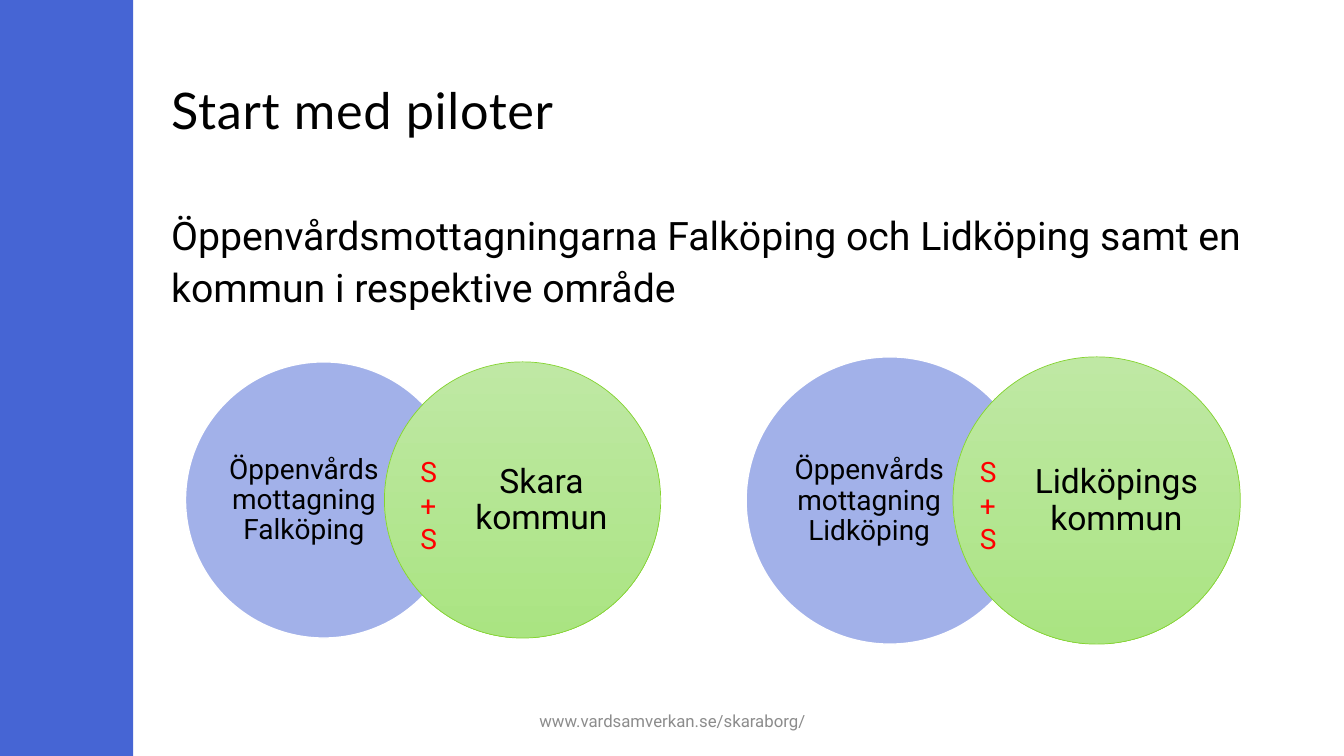
from lxml import etree
from pptx import Presentation
from pptx.dml.color import RGBColor
from pptx.enum import shapes, text
from pptx.oxml import ns
from pptx.util import Inches, Pt

TITLE = "Start med piloter"
BODY = "Öppenvårdsmottagningarna Falköping och Lidköping samt en kommun i respektive område"
FOOTER = "www.vardsamverkan.se/skaraborg/"
OVERLAP = "S + S"
PILOTS = [
    {"clinic": "Öppenvårdsmottagning\vFalköping", "municipality": "Skara kommun",
     "left": 1.84, "top": 3.59, "diameter": 2.74, "overlap_left": 4.07},
    {"clinic": "Öppenvårdsmottagning\vLidköping", "municipality": "Lidköpings kommun",
     "left": 7.4, "top": 3.54, "diameter": 2.85, "overlap_left": 9.62},
]

BLUE = RGBColor(0x46, 0x65, 0xD4)
WHITE = RGBColor(0xFF, 0xFF, 0xFF)
BLACK = RGBColor(0, 0, 0)
GREY = RGBColor(0x8C, 0x8C, 0x8C)
RED = RGBColor(0xFF, 0, 0)
GREEN_LIGHT = RGBColor(0xBF, 0xE8, 0xA4)
GREEN_DARK = RGBColor(0xAA, 0xE4, 0x82)
GREEN_LINE = RGBColor(0x85, 0xD4, 0x31)

CIRCLE_STEP = 0.72
LABEL_WIDTH, LABEL_HEIGHT, LABEL_TOP = 0.577, 0.764, 0.12
CLINIC_INDENT, MUNICIPALITY_INDENT = 0.14, 0.28


def add_label(slide, box, words, size, color=BLACK, font="Roboto", align=None,
              anchor=text.MSO_ANCHOR.MIDDLE, spacing=None, inset=None):
    label = slide.shapes.add_textbox(*map(Inches, box))
    frame = label.text_frame
    frame.word_wrap = True
    frame.vertical_anchor = anchor
    if inset is not None:
        frame.margin_left = frame.margin_right = Inches(inset)
        frame.margin_top = frame.margin_bottom = Inches(inset)
    paragraph = frame.paragraphs[0]
    paragraph.alignment = align
    paragraph.line_spacing = spacing
    for index, line in enumerate(words.split("\v")):
        if index:
            paragraph.add_line_break()
        run = paragraph.add_run()
        run.text = line
        run.font.size = Pt(size)
        run.font.name = font
        run.font.color.rgb = color
    return paragraph


def add_plain_shape(slide, kind, box):
    shape = slide.shapes.add_shape(kind, *map(Inches, box))
    shape.shadow.inherit = False
    return shape


def add_circle(slide, left, top, diameter, line_color, line_width):
    circle = add_plain_shape(slide, shapes.MSO_SHAPE.OVAL, (left, top, diameter, diameter))
    circle.line.color.rgb = line_color
    circle.line.width = Pt(line_width)
    return circle


def add_pilot(slide, pilot):
    left, top, diameter = pilot["left"], pilot["top"], pilot["diameter"]
    right_left = left + CIRCLE_STEP * diameter

    def add_circle_label(circle_left, indent, words, size):
        box = (circle_left + indent * diameter, top + LABEL_TOP * diameter,
               LABEL_WIDTH * diameter, LABEL_HEIGHT * diameter)
        add_label(slide, box, words, size, align=text.PP_ALIGN.CENTER, spacing=0.9, inset=0)

    clinic = add_circle(slide, left, top, diameter, WHITE, 1)
    clinic.fill.solid()
    clinic.fill.fore_color.rgb = BLUE
    color = clinic.fill._xPr.find(".//" + ns.qn("a:srgbClr"))
    etree.SubElement(color, ns.qn("a:alpha"), val="50000")
    add_circle_label(left, CLINIC_INDENT, pilot["clinic"], 20)

    municipality = add_circle(slide, right_left, top, diameter, GREEN_LINE, 0.5)
    municipality.fill.gradient()
    municipality.fill.gradient_angle = 270
    for stop, shade in zip(municipality.fill.gradient_stops, (GREEN_LIGHT, GREEN_DARK)):
        stop.color.rgb = shade
    add_circle_label(right_left, MUNICIPALITY_INDENT, pilot["municipality"], 24)

    add_label(slide, (pilot["overlap_left"], 4.46, 0.44, 1.11), OVERLAP, 20, RED,
              anchor=text.MSO_ANCHOR.TOP)


def main():
    presentation = Presentation()
    presentation.slide_width = Inches(13.33)
    presentation.slide_height = Inches(7.5)
    slide = presentation.slides.add_slide(presentation.slide_layouts[6])

    band = add_plain_shape(slide, shapes.MSO_SHAPE.RECTANGLE, (0, 0, 1.32, 7.5))
    band.fill.solid()
    band.fill.fore_color.rgb = BLUE
    band.line.fill.background()

    title = add_label(slide, (1.6, 0.4, 10.81, 1.45), TITLE, 36, font="Lato", spacing=0.9)
    title.runs[0].font._element.set("spc", "50")
    add_label(slide, (1.6, 2, 10.81, 4.76), BODY, 28,
              anchor=text.MSO_ANCHOR.TOP, spacing=1.1)
    add_label(slide, (4.42, 6.95, 4.5, 0.4), FOOTER, 12, GREY, align=text.PP_ALIGN.CENTER)
    for pilot in PILOTS:
        add_pilot(slide, pilot)

    presentation.save("out.pptx")


if __name__ == "__main__":
    main()
